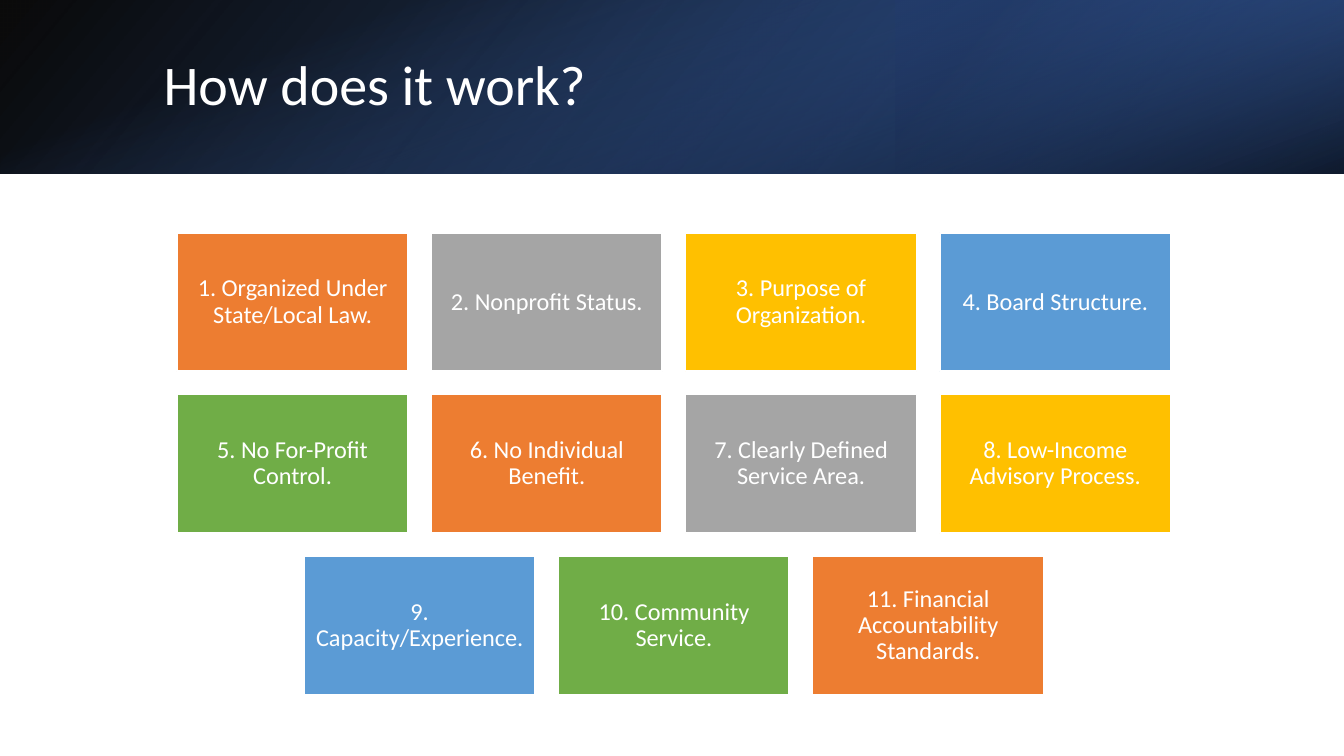
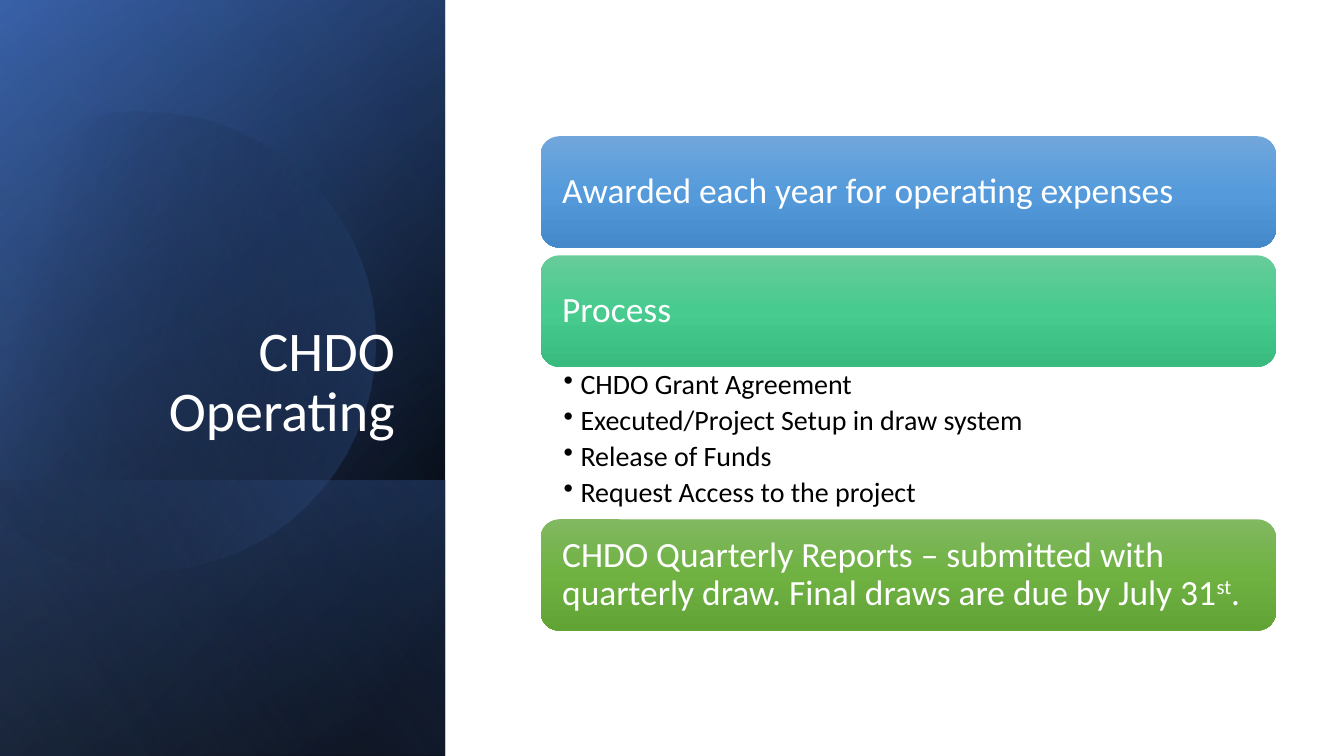
from dataclasses import dataclass
from math import cos, radians, sin

from pptx import Presentation
from pptx.dml.color import RGBColor
from pptx.enum.shapes import MSO_SHAPE as Preset
from pptx.enum.text import MSO_ANCHOR as Anchor, PP_ALIGN as Align
from pptx.oxml import parse_xml
from pptx.oxml.ns import nsdecls, qn
from pptx.util import Pt


@dataclass(frozen=True)
class Theme:
    font: str = "Calibri"
    white: str = "FFFFFF"
    black: str = "000000"
    navy: str = "203864"
    deep_blue: str = "2F5597"
    blue: str = "4472C4"
    pale_blue: str = "8FAADC"
    tiles: tuple = ("ED7D31", "A5A5A5", "FFC000", "5B9BD5", "70AD47")
    title_size: int = 30
    step_size: int = 19
    bullet_size: int = 15
    tile_size: int = 13
    line_spacing: float = 0.9


THEME = Theme()
WIDTH, HEIGHT = 720, 405
BAND_HEIGHT = 93
PANEL_WIDTH = 238.4

REQUIREMENTS_TITLE = "How does it work?"
REQUIREMENT_ROWS = [
    ["1. Organized Under State/Local Law.", "2. Nonprofit Status.",
     "3. Purpose of Organization.", "4. Board Structure."],
    ["5. No For-Profit Control.", "6. No Individual Benefit.",
     "7. Clearly Defined Service Area.", "8. Low-Income Advisory Process."],
    ["9. Capacity/Experience.", "10. Community Service.",
     "11. Financial Accountability Standards."],
]
TILE_WIDTH, TILE_HEIGHT, TILE_GAP = 123.8, 74.2, 12.4
TILES_CENTER, TILES_TOP = 361, 124.8

OPERATING_TITLE = "CHDO Operating"
STEPS = [
    {"top": 73, "spans": [("Awarded each year for operating expenses", False)],
     "stops": [(0, "71A6DB", 100), (50, "559BDB", 100), (100, "448ACA", 100)]},
    {"top": 136.8, "spans": [("Process", False)],
     "stops": [(0, "67CC9A", 100), (50, "47CB8E", 100), (100, "39BB7F", 100)]},
    {"top": 278.2,
     "spans": [("CHDO Quarterly Reports – submitted with quarterly draw. "
                "Final draws are due by July 31", False), ("st", True), (".", False)],
     "stops": [(0, "81B861", 100), (50, "6FB242", 100), (100, "62A336", 100)]},
]
PROCESS_BULLETS = [
    "CHDO Grant Agreement",
    "Executed/Project Setup in draw system",
    "Release of Funds",
    "Request Access to the project",
]
STEP_LEFT, STEP_WIDTH, STEP_HEIGHT = 289.6, 394, 59.6

BAND_AREA = (0, 0, WIDTH, BAND_HEIGHT)
BAND_LAYERS = [
    (BAND_AREA, 0, True, 140, [(0, THEME.black, 96), (100, THEME.deep_blue, 100)]),
    ((480, 0, 240, BAND_HEIGHT), 180, True, 320,
     [(19, THEME.navy, 68), (100, THEME.blue, 79)]),
    (BAND_AREA, 90, False, 340, [(23, THEME.blue, 0), (99, THEME.black, 74)]),
]
PANEL_AREA = (0, 0, PANEL_WIDTH, HEIGHT)
PANEL_BACK = [
    (PANEL_AREA, 90, True, 50, [(8, THEME.black, 100), (100, THEME.deep_blue, 100)]),
    (PANEL_AREA, 90, True, 30, [(0, THEME.black, 0), (99, THEME.blue, 46)]),
    ((0, 257.2, PANEL_WIDTH, 147.8), 90, True, 130,
     [(2, THEME.blue, 29), (100, THEME.black, 30)]),
]
PANEL_FRONT = [
    (PANEL_AREA, 90, True, 120, [(0, THEME.black, 0), (99, THEME.pale_blue, 11)]),
]
DISC_TURN = -16.1
DISC_CENTER = (85.7, 181)
DISC_START = (80, 60)
DISC_CURVES = [
    [(133, 60.5), (181, 96), (196.5, 149)],
    [(215, 214.5), (177, 283), (111.5, 301.5)],
    [(70.5, 313), (29, 303), (-1.5, 278)],
    [(-8, 271.5)],
    [(-8, 94.5)],
    [(0, 87)],
    [(12, 77), (27, 69), (43, 64)],
    [(55.5, 60.5), (68, 59), (80, 60)],
]
DISC_STOPS = [(29, THEME.black, 0), (100, THEME.blue, 43)]


def points(*values):
    return [Pt(value) for value in values]


def paint_gradient(shape, stops, angle):
    marks = "".join(
        f'<a:gs pos="{place * 1000}"><a:srgbClr val="{color}">'
        f'<a:alpha val="{opacity * 1000}"/></a:srgbClr></a:gs>'
        for place, color, opacity in stops)
    shape.fill.solid()
    properties = shape._element.spPr
    properties.replace(properties.find(qn("a:solidFill")), parse_xml(
        f'<a:gradFill {nsdecls("a")} rotWithShape="1"><a:gsLst>{marks}</a:gsLst>'
        f'<a:lin ang="{angle * 60000}" scaled="0"/></a:gradFill>'))
    shape.line.fill.background()
    shape.shadow.inherit = False


def add_layers(page, layers):
    for (left, top, width, height), turn, flip, angle, stops in layers:
        wide, tall = (height, width) if turn == 90 else (width, height)
        layer = page.shapes.add_shape(Preset.RECTANGLE, *points(
            left + (width - wide) / 2, top + (height - tall) / 2, wide, tall))
        layer.rotation = turn
        if flip:
            layer._element.spPr.xfrm.set("flipH", "1")
        paint_gradient(layer, stops, angle)


def add_disc(page):
    outline = [DISC_START]
    for curve in DISC_CURVES:
        if len(curve) == 1:
            outline += curve
            continue
        nodes = [outline[-1], *curve]
        for step in range(1, 17):
            t = step / 16
            weights = ((1 - t) ** 3, 3 * t * (1 - t) ** 2, 3 * t * t * (1 - t), t ** 3)
            outline.append(tuple(
                sum(weight * node[axis] for weight, node in zip(weights, nodes))
                for axis in (0, 1)))
    turn = radians(-DISC_TURN)
    center_x, center_y = DISC_CENTER
    upright = [
        points(center_x + (x - center_x) * cos(turn) - (y - center_y) * sin(turn),
               center_y + (x - center_x) * sin(turn) + (y - center_y) * cos(turn))
        for x, y in outline]
    builder = page.shapes.build_freeform(*upright[0])
    builder.add_line_segments(upright[1:], close=True)
    disc = builder.convert_to_shape()
    disc.rotation = DISC_TURN
    paint_gradient(disc, DISC_STOPS, 30)


def set_frame(shape, insets, anchor):
    frame = shape.text_frame
    frame.word_wrap = True
    frame.vertical_anchor = anchor
    (frame.margin_left, frame.margin_top,
     frame.margin_right, frame.margin_bottom) = points(*insets)
    return frame


def write(para, spans, size, color=THEME.white, align=Align.LEFT):
    para.alignment = align
    para.line_spacing = THEME.line_spacing
    para.font.name = THEME.font
    para.font.size = Pt(size)
    para.font.color.rgb = RGBColor.from_string(color)
    for text, raised in spans:
        span = para.add_run()
        span.text = text
        if raised:
            span.font._element.set("baseline", "30000")


def add_title(page, text, area, anchor, align):
    box = page.shapes.add_textbox(*points(*area))
    frame = set_frame(box, (7.2, 3.6, 7.2, 3.6), anchor)
    write(frame.paragraphs[0], [(text, False)], THEME.title_size, align=align)


def add_tiles(page):
    number = 0
    for row, labels in enumerate(REQUIREMENT_ROWS):
        row_width = len(labels) * (TILE_WIDTH + TILE_GAP) - TILE_GAP
        for column, label in enumerate(labels):
            tile = page.shapes.add_shape(Preset.RECTANGLE, *points(
                TILES_CENTER - row_width / 2 + column * (TILE_WIDTH + TILE_GAP),
                TILES_TOP + row * (TILE_HEIGHT + TILE_GAP), TILE_WIDTH, TILE_HEIGHT))
            tile.shadow.inherit = False
            tile.fill.solid()
            tile.fill.fore_color.rgb = RGBColor.from_string(
                THEME.tiles[number % len(THEME.tiles)])
            tile.line.color.rgb = RGBColor.from_string(THEME.white)
            tile.line.width = Pt(1)
            frame = set_frame(tile, [3.6] * 4, Anchor.MIDDLE)
            write(frame.paragraphs[0], [(label, False)], THEME.tile_size,
                  align=Align.CENTER)
            number += 1


def add_steps(page):
    for step in STEPS:
        bar = page.shapes.add_shape(Preset.ROUNDED_RECTANGLE, *points(
            STEP_LEFT, step["top"], STEP_WIDTH, STEP_HEIGHT))
        paint_gradient(bar, step["stops"], 90)
        frame = set_frame(bar, [8.7] * 4, Anchor.MIDDLE)
        write(frame.paragraphs[0], step["spans"], THEME.step_size)


def add_bullets(page):
    top = STEPS[1]["top"] + STEP_HEIGHT
    box = page.shapes.add_textbox(*points(
        STEP_LEFT, top, STEP_WIDTH, STEPS[2]["top"] - top))
    frame = set_frame(box, (12.4, 2, 10.8, 2), Anchor.TOP)
    for index, text in enumerate(PROCESS_BULLETS):
        para = frame.add_paragraph() if index else frame.paragraphs[0]
        write(para, [(text, False)], THEME.bullet_size, THEME.black)
        para.space_after = Pt(3)
        properties = para._p.get_or_add_pPr()
        properties.set("marL", str(Pt(9)))
        properties.set("indent", str(-Pt(9)))
        properties.find(qn("a:defRPr")).addprevious(
            parse_xml(f'<a:buChar {nsdecls("a")} char="•"/>'))


def build_requirements(page):
    add_layers(page, BAND_LAYERS)
    add_title(page, REQUIREMENTS_TITLE, (80.6, 21, 593, 52), Anchor.MIDDLE, Align.LEFT)
    add_tiles(page)


def build_operating(page):
    add_layers(page, PANEL_BACK)
    add_disc(page)
    add_layers(page, PANEL_FRONT)
    add_title(page, OPERATING_TITLE, (34.6, 99.4, 184, 142), Anchor.BOTTOM, Align.RIGHT)
    add_steps(page)
    add_bullets(page)


def main():
    deck = Presentation()
    deck.slide_width, deck.slide_height = points(WIDTH, HEIGHT)
    for build in (build_requirements, build_operating):
        build(deck.slides.add_slide(deck.slide_layouts[6]))
    deck.save("out.pptx")


if __name__ == "__main__":
    main()
